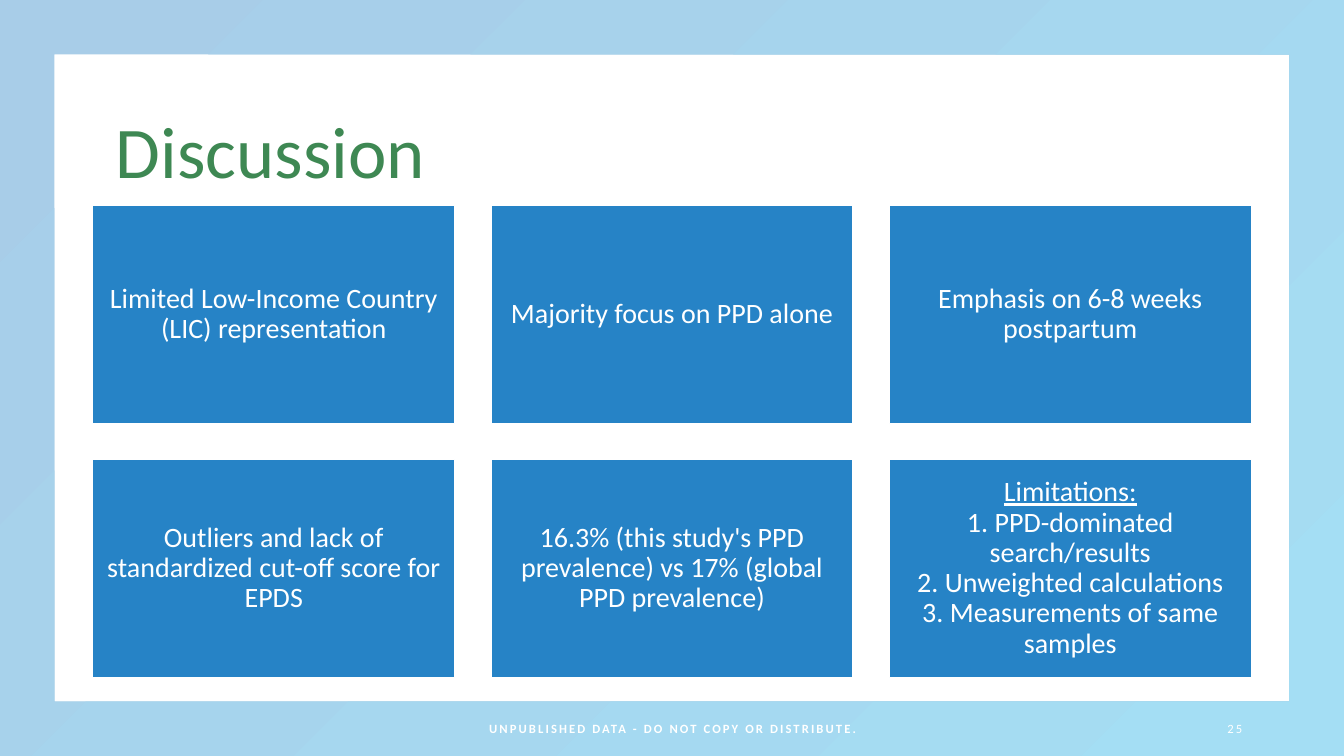
from dataclasses import dataclass

from pptx import Presentation
from pptx.dml.color import RGBColor
from pptx.enum.shapes import MSO_SHAPE as Shape
from pptx.enum.text import MSO_ANCHOR as Anchor, PP_ALIGN as Align
from pptx.slide import Slide
from pptx.text.text import TextFrame
from pptx.util import Inches, Pt

FONT = "Calibri"
BLUE, GREEN, WHITE = "2683C6", "3E8853", "FFFFFF"
TOP_TINT, END_TINT = "A8CDE8", "A4DEF4"

LEFT, TOP = 0.92, 2.04
WIDTH, HEIGHT, GAP = 3.59, 2.16, 0.36
COLS = 3


@dataclass
class Note:
    text: str
    left: float
    width: float
    align: Align
    bold: bool = False


TILES = [
    "Limited Low-Income Country (LIC) representation",
    "Majority focus on PPD alone",
    "Emphasis on 6-8 weeks postpartum",
    "Outliers and lack of standardized cut-off score for EPDS",
    "16.3% (this study's PPD prevalence) vs 17% (global PPD prevalence)",
    "Limitations:\n1. PPD-dominated search/results\n"
    "2. Unweighted calculations\n3. Measurements of same samples",
]
NOTES = [
    Note("UNPUBLISHED DATA - DO NOT COPY OR DISTRIBUTE.", 4.42, 4.5,
         Align.CENTER, True),
    Note("25", 9.42, 3, Align.RIGHT),
]


def color(code: str) -> RGBColor:
    return RGBColor.from_string(code)


def style(frame: TextFrame, size: float, code: str, align: Align,
          spacing: float = 1.0) -> None:
    """Format every paragraph and run in a text frame."""
    frame.word_wrap = True
    frame.vertical_anchor = Anchor.MIDDLE
    for para in frame.paragraphs:
        para.alignment = align
        para.line_spacing = spacing
        for run in para.runs:
            run.font.name = FONT
            run.font.size = Pt(size)
            run.font.color.rgb = color(code)


def add_border(slide: Slide, width: int, height: int) -> None:
    border = slide.shapes.add_shape(Shape.FRAME, 0, 0, width, height)
    border.adjustments[0] = 0.072
    border.shadow.inherit = False
    border.line.fill.background()
    border.fill.gradient()
    border.fill.gradient_angle = 315
    for stop, tint in zip(border.fill.gradient_stops, (TOP_TINT, END_TINT)):
        stop.color.rgb = color(tint)


def add_title(slide: Slide, text: str) -> None:
    title = slide.shapes.title
    title.left, title.top = Inches(1.05), Inches(0.81)
    title.width, title.height = Inches(11.5), Inches(1.45)
    title.text_frame.text = text
    style(title.text_frame, 52, GREEN, Align.LEFT, 0.9)


def add_tile(slide: Slide, index: int, text: str) -> None:
    row, col = divmod(index, COLS)
    tile = slide.shapes.add_shape(
        Shape.RECTANGLE,
        Inches(LEFT + col * (WIDTH + GAP)), Inches(TOP + row * (HEIGHT + GAP)),
        Inches(WIDTH), Inches(HEIGHT))
    tile.shadow.inherit = False
    tile.fill.solid()
    tile.fill.fore_color.rgb = color(BLUE)
    tile.line.color.rgb = color(WHITE)
    tile.line.width = Pt(1)
    frame = tile.text_frame
    frame.margin_left = frame.margin_right = Inches(0.08)
    frame.margin_top = frame.margin_bottom = Inches(0.08)
    frame.text = text
    style(frame, 20, WHITE, Align.CENTER, 0.9)
    if len(frame.paragraphs) > 1:
        frame.paragraphs[0].runs[0].font.underline = True


def add_note(slide: Slide, note: Note) -> None:
    box = slide.shapes.add_textbox(
        Inches(note.left), Inches(7.03), Inches(note.width), Inches(0.4))
    box.text_frame.text = note.text
    style(box.text_frame, 9, WHITE, note.align)
    run = box.text_frame.paragraphs[0].runs[0]
    run.font.bold = note.bold
    run._r.get_or_add_rPr().set("spc", "150")


def main() -> None:
    deck = Presentation()
    deck.slide_width, deck.slide_height = Inches(13.33), Inches(7.5)
    slide = deck.slides.add_slide(deck.slide_layouts[5])
    add_border(slide, deck.slide_width, deck.slide_height)
    add_title(slide, "Discussion")
    for index, text in enumerate(TILES):
        add_tile(slide, index, text)
    for note in NOTES:
        add_note(slide, note)
    deck.save("out.pptx")


if __name__ == "__main__":
    main()
